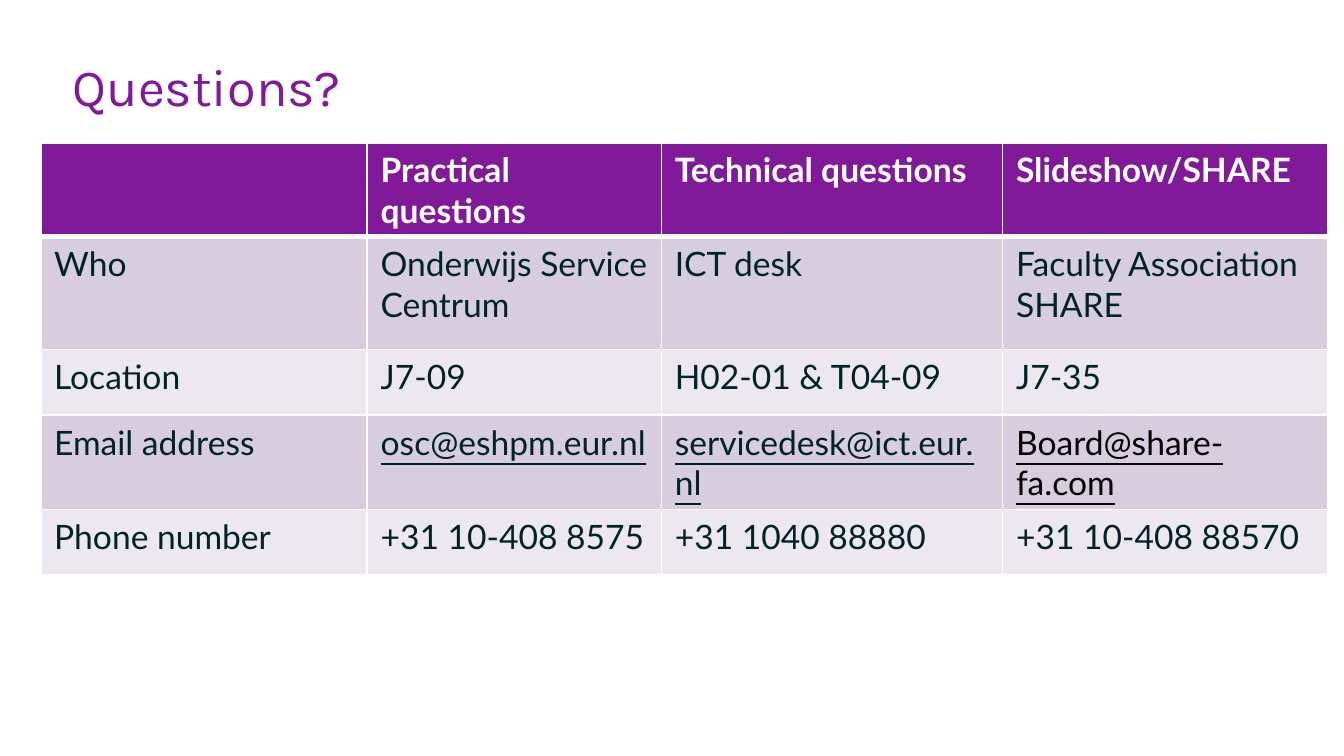
from lxml.etree import SubElement as Sub
from pptx import Presentation
from pptx.dml.color import RGBColor as RGB
from pptx.enum.text import MSO_ANCHOR as Anchor, MSO_AUTO_SIZE as Auto, PP_ALIGN as Align
from pptx.oxml.ns import qn
from pptx.util import Cm, Pt

PURPLE = RGB(0x80, 0x1A, 0x99)
WHITE = RGB(0xFF, 0xFF, 0xFF)
INK = RGB(0x00, 0x23, 0x28)
BLACK = RGB(0x00, 0x00, 0x00)
LILAC = RGB(0xD8, 0xCD, 0xDE)
PALE = RGB(0xED, 0xE8, 0xEF)

WIDTHS = [6.17, 5.56, 6.45, 6.15]
HEIGHTS = [1.24, 2.13, 1.24, 1.24, 1.24]
ROWS = [
    ["", "Practical questions", "Technical questions", "Slideshow/SHARE"],
    ["Who", "Onderwijs Service Centrum", "ICT desk", "Faculty Association SHARE"],
    ["Location", "J7-09", "H02-01 & T04-09", "J7-35"],
    ["Email address", "osc@eshpm.eur.nl", "servicedesk@ict.eur.nl", "Board@share-fa.com"],
    ["Phone number", "+31 10-408 8575", "+31 1040 88880", "+31 10-408 88570"],
]


def write(frame, text, size=18, face="Lato", color=INK, bold=False, under=False):
    para = frame.paragraphs[0]
    para.alignment = Align.LEFT
    if text:
        para.add_run().text = text
    for font in [para.font] + [run.font for run in para.runs]:
        font.size = Pt(size)
        font.name = face
        font.bold = bold
        font.underline = under
        font.color.rgb = color
    return para


def edge(cell, side, width):
    line = Sub(cell._tc.get_or_add_tcPr(), qn(f"a:ln{side}"), w=str(Pt(width)))
    fill = Sub(line, qn("a:solidFill"))
    Sub(fill, qn("a:srgbClr"), val=str(WHITE))


def add_title(slide, text):
    title = slide.shapes.title
    title.left, title.top = Cm(1.37), Cm(1.09)
    title.width, title.height = Cm(22.71), Cm(1.6)
    frame = title.text_frame
    frame.margin_left = frame.margin_right = 0
    frame.margin_top = frame.margin_bottom = 0
    frame.vertical_anchor = Anchor.TOP
    frame.auto_size = Auto.NONE
    para = write(frame, text, size=28, face="Karla", color=PURPLE)
    para.line_spacing = Pt(32)


def fill_cell(cell, row, col, text):
    head, mail = row == 0, row == 3 and col > 0
    for side in "LRTB":
        thick = (row, side) in [(0, "B"), (1, "T")]
        edge(cell, side, 3 if thick else 1)
    cell.fill.solid()
    cell.fill.fore_color.rgb = PURPLE if head else LILAC if row % 2 else PALE
    color = WHITE if head else BLACK if mail and col == 3 else INK
    write(cell.text_frame, text, color=color, bold=head, under=mail)


def add_grid(slide):
    frame = slide.shapes.add_table(
        len(ROWS), len(WIDTHS), Cm(0.77), Cm(2.7), Cm(sum(WIDTHS)), Cm(sum(HEIGHTS)))
    table = frame.table
    for col, width in zip(table.columns, WIDTHS):
        col.width = Cm(width)
    for row, height in zip(table.rows, HEIGHTS):
        row.height = Cm(height)
    for r, row in enumerate(ROWS):
        for c, text in enumerate(row):
            fill_cell(table.cell(r, c), r, c, text)


def main():
    deck = Presentation()
    deck.slide_width, deck.slide_height = Cm(25.4), Cm(14.29)
    slide = deck.slides.add_slide(deck.slide_layouts[5])
    add_title(slide, "Questions?")
    add_grid(slide)
    deck.save("out.pptx")


if __name__ == "__main__":
    main()
